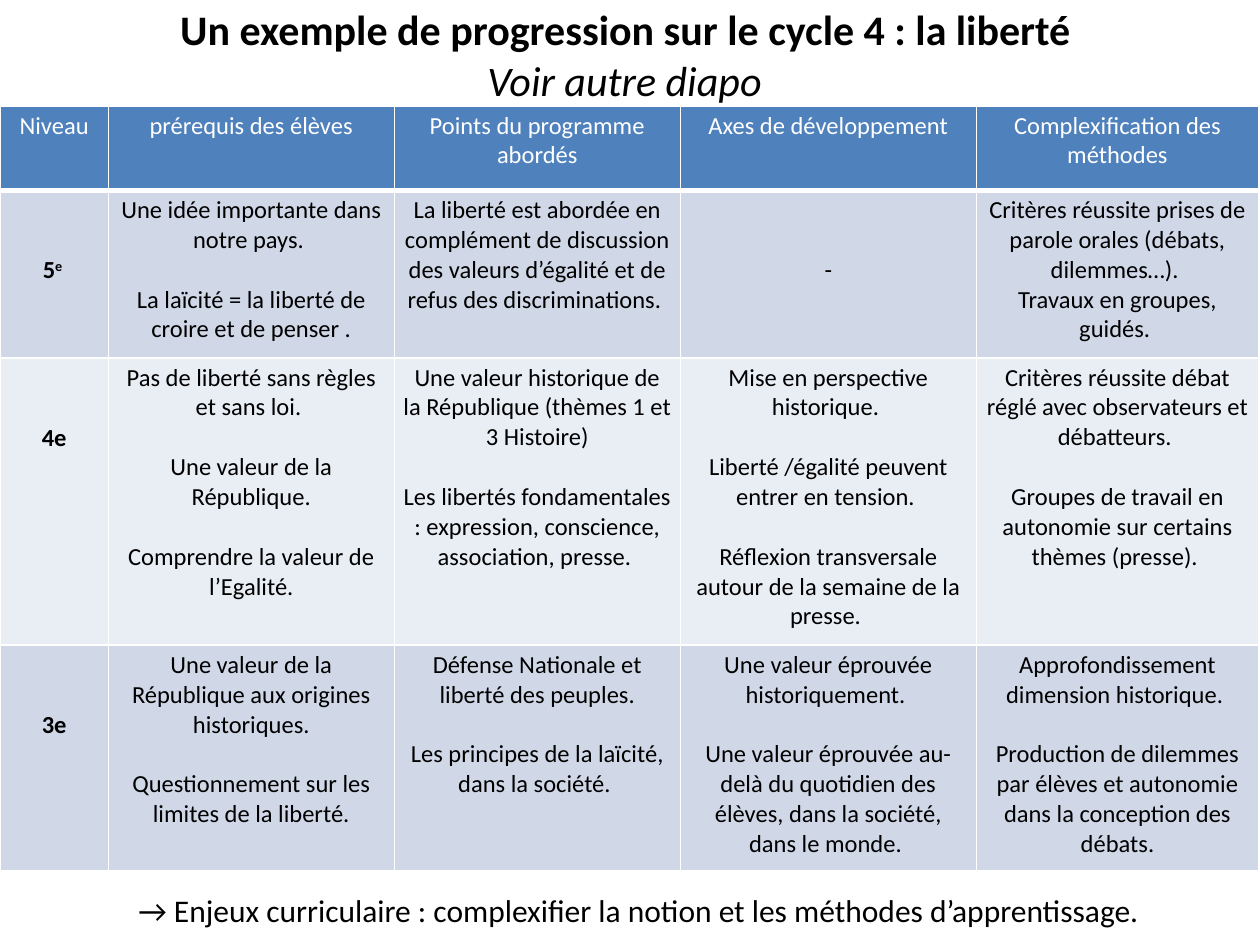
from lxml.etree import SubElement
from pptx import Presentation
from pptx.dml.color import RGBColor
from pptx.enum.text import MSO_ANCHOR, MSO_AUTO_SIZE, PP_ALIGN
from pptx.oxml.ns import qn
from pptx.util import Inches, Pt

COLORS = {"text": "000000", "white": "FFFFFF", "header": "4F81BD",
          "dark_band": "D0D8E8", "light_band": "E9EDF4"}
COLUMN_WIDTHS = [8.6, 22.7, 22.7, 23.5, 22.4]
ROW_HEIGHTS = [6.7, 13.3, 22.8, 17.9]
HEADERS = ["Niveau", "prérequis des élèves", "Points du programme abordés",
           "Axes de développement", "Complexification des méthodes"]
LEVELS = [
    ([("5", {}), ("e ", {"raised": True})], [
        ["Une idée importante dans notre pays. ",
         "La laïcité = la liberté de croire et de penser ."],
        ["La liberté est abordée en complément de discussion des valeurs "
         "d’égalité et de refus des discriminations. "],
        ["-"],
        ["Critères réussite prises de parole orales (débats, dilemmes…). ",
         "Travaux en groupes, guidés. "]]),
    ([("4e", {})], [
        ["Pas de liberté sans règles et sans loi. ",
         "Une valeur de la République.",
         "Comprendre la valeur de l’Egalité."],
        ["Une valeur historique de la République (thèmes 1 et 3 Histoire)",
         "Les libertés fondamentales : expression, conscience, association, presse. "],
        ["Mise en perspective historique. ",
         "Liberté /égalité peuvent entrer en tension. ",
         "Réflexion transversale autour de la semaine de la presse. "],
        ["Critères réussite débat réglé avec observateurs et débatteurs. ",
         "Groupes de travail en autonomie sur certains thèmes (presse). "]]),
    ([("3e", {})], [
        ["Une valeur de la République aux origines historiques.",
         "Questionnement sur les limites de la liberté."],
        ["Défense Nationale et liberté des peuples.",
         "Les principes de la laïcité, dans la société. "],
        ["Une valeur éprouvée historiquement. ",
         "Une valeur éprouvée au-delà du quotidien des élèves, dans la société, "
         "dans le monde. "],
        ["Approfondissement dimension historique. ",
         "Production de dilemmes par élèves et autonomie dans la conception "
         "des débats."]]),
]


class SlideBuilder:
    """Draws styled elements on a slide divided into 100 columns and 75 rows."""

    font = "Calibri"
    body_size = 14
    line_gap = 17.1
    cell_margins = (0.07, 0.04)

    def __init__(self, presentation):
        self.slide = presentation.slides.add_slide(presentation.slide_layouts[5])
        self.column = presentation.slide_width / 100
        self.row = presentation.slide_height / 75

    def box(self, left, top, width, height):
        return (round(left * self.column), round(top * self.row),
                round(width * self.column), round(height * self.row))

    def run(self, paragraph, text, size, color="text", bold=False,
            italic=False, raised=False):
        run = paragraph.add_run()
        run.text = text
        font = run.font
        font.name, font.size, font.bold, font.italic = self.font, Pt(size), bold, italic
        font.color.rgb = RGBColor.from_string(COLORS[color])
        if raised:
            run._r.get_or_add_rPr().set("baseline", "30000")

    def paragraphs(self, frame, lines, size, alignments, gap=0):
        for index, (runs, alignment) in enumerate(zip(lines, alignments)):
            paragraph = frame.add_paragraph() if index else frame.paragraphs[0]
            paragraph.alignment = alignment
            if index and gap:
                paragraph.space_before = Pt(gap)
            for text, style in runs:
                self.run(paragraph, text, size, **style)

    def frame(self, shape, lines, size, alignments):
        frame = shape.text_frame
        frame.word_wrap = False
        frame.auto_size = MSO_AUTO_SIZE.SHAPE_TO_FIT_TEXT
        frame.vertical_anchor = MSO_ANCHOR.TOP
        self.paragraphs(frame, lines, size, alignments)

    def title(self, place, lines, size, alignments):
        shape = self.slide.shapes.title
        shape.left, shape.top, shape.width, shape.height = self.box(*place)
        self.frame(shape, lines, size, alignments)

    def text(self, place, lines, size):
        shape = self.slide.shapes.add_textbox(*self.box(*place))
        self.frame(shape, lines, size, [PP_ALIGN.LEFT] * len(lines))

    def borders(self, cell, bottom):
        properties = cell._tc.get_or_add_tcPr()
        for side, width in (("L", 1), ("R", 1), ("T", 1), ("B", bottom)):
            line = SubElement(properties, qn(f"a:ln{side}"), w=str(Pt(width)))
            fill = SubElement(line, qn("a:solidFill"))
            SubElement(fill, qn("a:srgbClr"), val=COLORS["white"])

    def cell(self, cell, lines, fill, bottom=1, gap=0, skipped_lines=0):
        side, edge = self.cell_margins
        cell.margin_left = cell.margin_right = Inches(side)
        cell.margin_bottom = Inches(edge)
        cell.margin_top = Inches(edge) + Pt(skipped_lines * self.line_gap)
        self.borders(cell, bottom)
        cell.fill.solid()
        cell.fill.fore_color.rgb = RGBColor.from_string(COLORS[fill])
        self.paragraphs(cell.text_frame, lines, self.body_size,
                        [PP_ALIGN.CENTER] * len(lines), gap)

    def table(self, left, top, widths, heights):
        place = self.box(left, top, sum(widths), sum(heights))
        table = self.slide.shapes.add_table(len(heights), len(widths), *place).table
        for column, width in zip(table.columns, widths):
            column.width = round(width * self.column)
        for row, height in zip(table.rows, heights):
            row.height = round(height * self.row)
        return table

    def progression(self, left, top):
        table = self.table(left, top, COLUMN_WIDTHS, ROW_HEIGHTS)
        for column, header in enumerate(HEADERS):
            self.cell(table.cell(0, column), [[(header, {"color": "white"})]],
                      "header", bottom=3)
        for row, (level, topics) in enumerate(LEVELS, 1):
            fill = "dark_band" if row % 2 else "light_band"
            label = [(text, {"bold": True, **style}) for text, style in level]
            self.cell(table.cell(row, 0), [label], fill, skipped_lines=2)
            for column, texts in enumerate(topics, 1):
                joined = texts[-1].startswith("Travaux")
                self.cell(table.cell(row, column), [[(text, {})] for text in texts],
                          fill, gap=0 if joined else self.line_gap,
                          skipped_lines=2 if texts == ["-"] else 0)


def main():
    presentation = Presentation()
    presentation.slide_width, presentation.slide_height = Inches(10), Inches(7.5)
    builder = SlideBuilder(presentation)
    builder.progression(0, 8.4)
    builder.title((13.3, -0.2, 73.3, 9.1), [
        [("Un exemple de progression sur le cycle 4 : la liberté", {"bold": True})],
        [("Voir autre diapo ", {"italic": True})],
    ], 24, [PP_ALIGN.LEFT, PP_ALIGN.CENTER])
    builder.text((10, 70.2, 83.2, 4), [
        [("→ Enjeux curriculaire : complexifier la notion et les méthodes "
          "d’apprentissage.", {})],
    ], 18)
    presentation.save("out.pptx")


if __name__ == "__main__":
    main()
